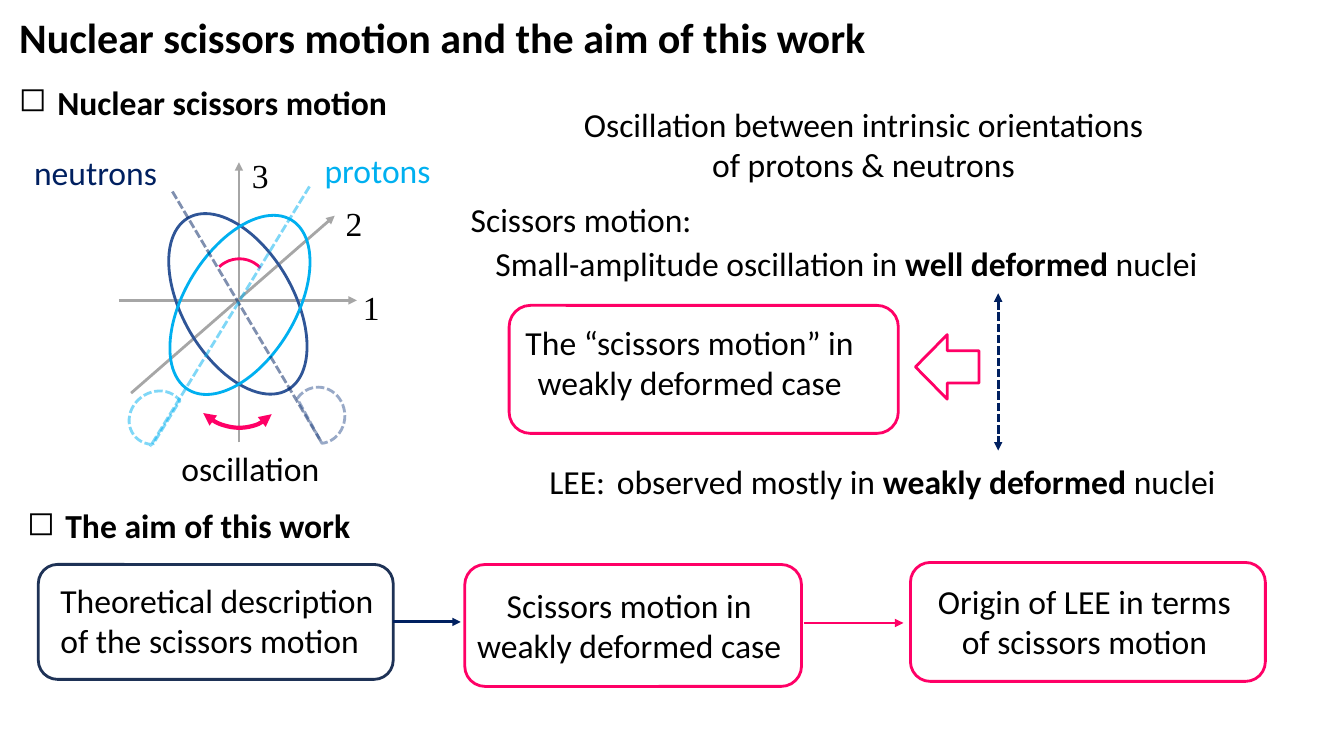
from lxml.etree import SubElement
from pptx import Presentation
from pptx.dml.color import RGBColor
from pptx.enum.dml import MSO_LINE
from pptx.enum.shapes import MSO_CONNECTOR, MSO_SHAPE
from pptx.enum.text import MSO_ANCHOR, MSO_AUTO_SIZE, PP_ALIGN
from pptx.oxml.ns import qn
from pptx.util import Inches, Pt

BLACK = RGBColor(0x00, 0x00, 0x00)
GREY = RGBColor(0xA6, 0xA6, 0xA6)
NAVY = RGBColor(0x00, 0x20, 0x60)
INK = RGBColor(0x1E, 0x32, 0x56)
BLUE = RGBColor(0x2F, 0x55, 0x97)
STEEL = RGBColor(0x32, 0x54, 0x91)
SKY = RGBColor(0x00, 0xB0, 0xF0)
PINK = RGBColor(0xFF, 0x00, 0x66)
SANS, SERIF = "Calibri", "Times New Roman"
LEFT, MID = PP_ALIGN.LEFT, PP_ALIGN.CENTER

TITLE = "Nuclear scissors motion and the aim of this work"

# heading, (left, top, width, height)
HEADS = [
    ("Nuclear scissors motion", (0.09, 0.76, 5.87, 0.5)),
    ("The aim of this work", (0.17, 4.96, 6.73, 0.5)),
]

# text, box, font, colour, line spacing
LABELS = [
    ("1", (3.5, 2.7, 0.4, 0.47), SERIF, BLACK, 1.25),
    ("2", (3.33, 1.86, 0.36, 0.47), SERIF, BLACK, 1.25),
    ("3", (2.4, 1.39, 0.56, 0.47), SERIF, BLACK, 1.25),
    ("neutrons", (0.24, 1.38, 1.63, 0.55), SANS, NAVY, 1.2),
    ("protons", (3.12, 1.36, 1.85, 0.56), SANS, SKY, 1.2),
    ("oscillation", (1.7, 4.31, 1.67, 0.46), SANS, BLACK, 1.2),
]

# runs (every second one is bold), box, alignment
NOTES = [
    (["Oscillation between intrinsic orientations of protons & neutrons"],
     (5.58, 0.98, 5.97, 0.91), MID),
    (["Scissors motion:"], (4.57, 1.92, 2.9, 0.5), LEFT),
    (["Small-amplitude oscillation in", " well deformed ", "nuclei"],
     (4.05, 2.36, 8.69, 0.5), MID),
    (["The “scissors motion” in weakly deformed case"],
     (4.9, 3.14, 3.88, 0.91), MID),
    (["LEE:"], (5.35, 4.52, 1.78, 0.5), LEFT),
    (["observed mostly in ", "weakly deformed ", "nuclei"],
     (6.02, 4.52, 7.39, 0.5), LEFT),
    (["Theoretical description of the scissors motion"],
     (0.5, 5.7, 3.4, 0.91), LEFT),
    (["Scissors motion in weakly deformed case"],
     (4.48, 5.75, 3.52, 0.91), MID),
    (["Origin of LEE in terms of scissors motion"],
     (9.05, 5.71, 3.41, 0.91), MID),
]

# start, end, colour, arrowheads
AXES = [
    ((1.18, 2.98), (3.54, 2.98)),
    ((1.3, 3.9), (3.32, 2.14)),
    ((2.37, 4.39), (2.37, 1.61)),
]
BLADES = [
    ((1.71, 1.9), (3.19, 4.39), NAVY),
    ((3.07, 1.85), (1.49, 4.43), SKY),
]

# kind, box, rotation, colour
BODIES = [
    (MSO_SHAPE.OVAL, (1.81, 2.03, 1.1, 1.97), 329.9, BLUE),
    (MSO_SHAPE.OVAL, (1.83, 2.04, 1.1, 1.97), 31.3, SKY),
    (MSO_SHAPE.ARC, (2.08, 2.57, 0.58, 0.57), 316.9, PINK),
    (MSO_SHAPE.LEFT_ARROW, (9.08, 3.32, 0.63, 0.64), 0, PINK),
]
GRIPS = [
    ((2.9, 3.84, 0.52, 0.56), 173.2, STEEL),
    ((1.3, 3.86, 0.51, 0.57), 53.5, SKY),
]
SWING = (1.87, 3.26, 0.91, 1.01)
FRAMES = [
    ((5.05, 3.03, 3.86, 1.27), PINK),
    ((0.38, 5.6, 3.52, 1.14), INK),
    ((4.61, 5.6, 3.34, 1.21), PINK),
    ((9.03, 5.58, 3.52, 1.18), PINK),
]

deck = Presentation()
deck.slide_width, deck.slide_height = Inches(13.33), Inches(7.5)
slide = deck.slides.add_slide(deck.slide_layouts[5])
shapes = slide.shapes


def inches(nums):
    return [Inches(n) for n in nums]


def stroke(item, color, width=2, faint=False, dash=False, ends=()):
    """Style an outline; ends lists headEnd and/or tailEnd, in that order."""
    line = item.line
    line.color.rgb = color
    line.width = Pt(width)
    if dash or faint:
        line.dash_style = MSO_LINE.SQUARE_DOT
    ln = item.element.spPr.find(qn("a:ln"))
    if faint:
        tone = ln.find(".//" + qn("a:srgbClr"))
        SubElement(tone, qn("a:alpha"), val="50000")
    for end in ends:
        SubElement(ln, qn("a:" + end), type="triangle")


def add_line(start, stop, color, **style):
    item = shapes.add_connector(MSO_CONNECTOR.STRAIGHT, *inches(start + stop))
    stroke(item, color, **style)
    SubElement(item.element.spPr, qn("a:effectLst"))
    return item


def outline(kind, box, color, turn=0, **style):
    item = shapes.add_shape(kind, *inches(box))
    item.rotation = turn
    item.shadow.inherit = False
    item.fill.background()
    stroke(item, color, **style)
    return item


def style_font(run, size=24, bold=False, face=SANS, color=BLACK):
    font = run.font
    font.size, font.bold, font.name = Pt(size), bold, face
    font.color.rgb = color


def add_text(runs, box, align=LEFT, bold=False, face=SANS, color=BLACK):
    """Add a text box whose second run, if any, is bold."""
    frame = shapes.add_textbox(*inches(box)).text_frame
    frame.word_wrap = True
    frame.auto_size = MSO_AUTO_SIZE.SHAPE_TO_FIT_TEXT
    para = frame.paragraphs[0]
    para.alignment = align
    for i, words in enumerate(runs):
        run = para.add_run()
        run.text = words
        style_font(run, bold=bold or i % 2 == 1, face=face, color=color)
    return para


title = shapes.title
title.left, title.top, title.width, title.height = inches((0.09, 0.06, 10.12, 0.61))
frame = title.text_frame
frame.text = TITLE
frame.word_wrap = True
frame.auto_size = MSO_AUTO_SIZE.NONE
frame.vertical_anchor = MSO_ANCHOR.TOP
frame.paragraphs[0].alignment = LEFT
style_font(frame.paragraphs[0].runs[0], 30, True)

for words, box in HEADS:
    props = add_text([words], box, bold=True)._p.get_or_add_pPr()
    indent = Inches(0.38)
    props.set("marL", str(indent))
    props.set("indent", str(-indent))
    SubElement(props, qn("a:buChar"), char="◻")

for start, stop in AXES:
    add_line(start, stop, GREY, ends=["tailEnd"])
for kind, box, turn, color in BODIES:
    outline(kind, box, color, turn)
for start, stop, color in BLADES:
    add_line(start, stop, color, faint=True)
for box, turn, color in GRIPS:
    outline(MSO_SHAPE.CHORD, box, color, turn, faint=True)
outline(MSO_SHAPE.ARC, SWING, PINK, 133, width=3, ends=["headEnd", "tailEnd"])

for words, box, face, color, gap in LABELS:
    add_text([words], box, face=face, color=color).line_spacing = gap
for runs, box, align in NOTES:
    add_text(runs, box, align)

case, theory, weak, origin = [
    outline(MSO_SHAPE.ROUNDED_RECTANGLE, box, color) for box, color in FRAMES
]
add_line((9.9, 2.91), (9.9, 4.47), NAVY, dash=True, ends=["headEnd", "tailEnd"])
step = add_line((3.9, 6.17), (4.57, 6.17), NAVY, ends=["tailEnd"])
step.begin_connect(theory, 3)
add_line((7.97, 6.18), (8.96, 6.18), PINK, ends=["tailEnd"])

deck.save("out.pptx")
